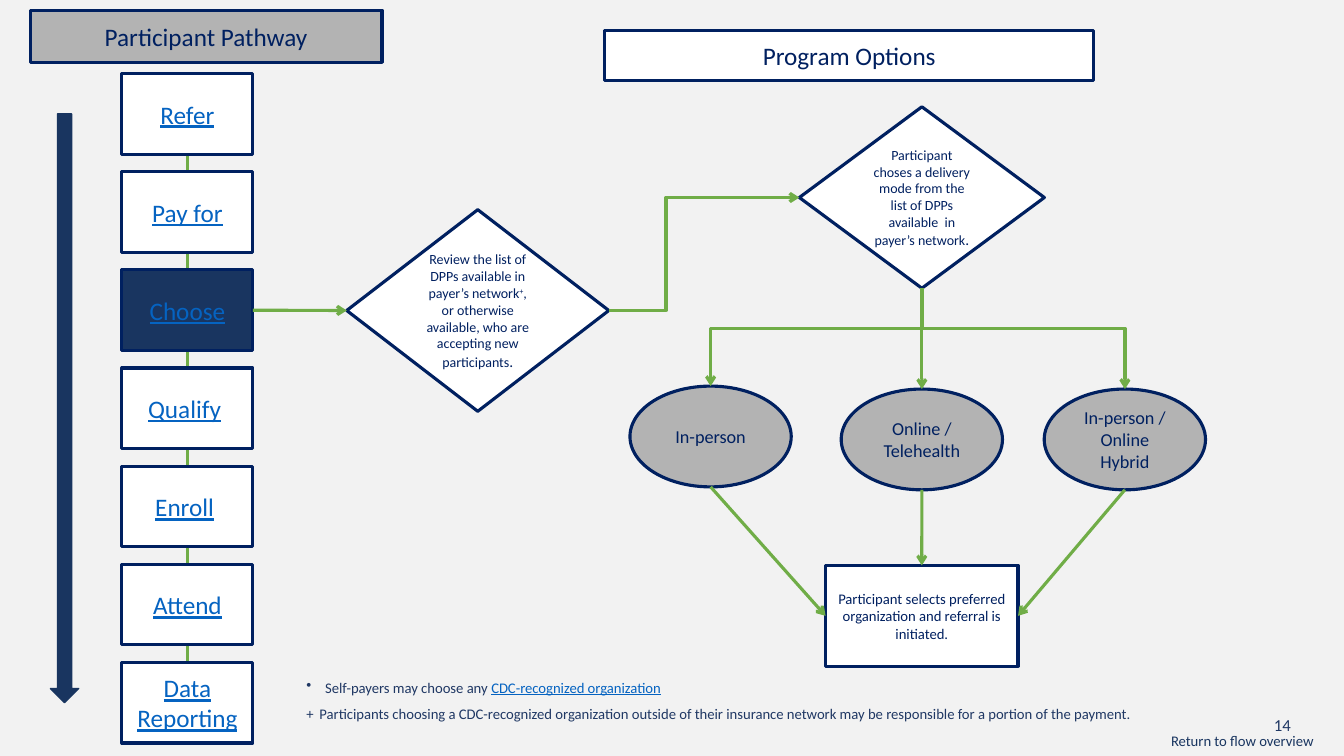
from dataclasses import dataclass

from lxml import etree
from pptx import Presentation
from pptx.dml.color import RGBColor
from pptx.enum.shapes import MSO_CONNECTOR, MSO_SHAPE
from pptx.enum.text import MSO_ANCHOR, PP_ALIGN
from pptx.oxml.ns import qn
from pptx.shapes.autoshape import Shape
from pptx.shapes.connector import Connector
from pptx.util import Pt

RECT, DIAMOND = MSO_SHAPE.RECTANGLE, MSO_SHAPE.FLOWCHART_DECISION
ELLIPSE, DOWN_ARROW = MSO_SHAPE.OVAL, MSO_SHAPE.DOWN_ARROW
STRAIGHT, ELBOW = MSO_CONNECTOR.STRAIGHT, MSO_CONNECTOR.ELBOW
CENTER, MIDDLE = PP_ALIGN.CENTER, MSO_ANCHOR.MIDDLE
TOP, LEFT, BOTTOM, RIGHT = range(4)

FONT = "Calibri"
NAVY, DEEP_BLUE, SLATE = "002060", "193560", "203864"
GREEN, GRAY, WHITE, PAPER, LINK = "70AD47", "B3B3B3", "FFFFFF", "F2F2F2", "0563C1"
LINE_WIDTH = 2.25


@dataclass
class Span:
    text: str
    size: float
    color: str = NAVY
    underline: bool = False
    superscript: bool = False


@dataclass
class Node:
    kind: int
    left: float
    top: float
    width: float
    height: float
    fill: str
    spans: tuple[Span, ...] = ()
    line: str = NAVY
    line_width: float = LINE_WIDTH


def rgb(color: str) -> RGBColor:
    return RGBColor.from_string(color)


def add_spans(para, spans: tuple[Span, ...]) -> None:
    for span in spans:
        run = para.add_run()
        run.text = span.text
        font = run.font
        font.name, font.size, font.underline = FONT, Pt(span.size), span.underline
        font.color.rgb = rgb(span.color)
        if span.superscript:
            run._r.get_or_add_rPr().set("baseline", "30000")


def add_node(page, node: Node) -> Shape:
    shape = page.shapes.add_shape(
        node.kind, Pt(node.left), Pt(node.top), Pt(node.width), Pt(node.height))
    shape.shadow.inherit = False
    shape.fill.solid()
    shape.fill.fore_color.rgb = rgb(node.fill)
    shape.line.color.rgb = rgb(node.line)
    shape.line.width = Pt(node.line_width)
    if node.spans:
        frame = shape.text_frame
        frame.word_wrap, frame.vertical_anchor = True, MIDDLE
        frame.paragraphs[0].alignment = CENTER
        add_spans(frame.paragraphs[0], node.spans)
    return shape


def add_text(page, left: float, top: float, width: float, height: float,
             lines: list[tuple[Span, ...]], wrap: bool = False) -> Shape:
    box = page.shapes.add_textbox(Pt(left), Pt(top), Pt(width), Pt(height))
    frame = box.text_frame
    frame.word_wrap = wrap
    for index, spans in enumerate(lines):
        para = frame.add_paragraph() if index else frame.paragraphs[0]
        add_spans(para, spans)
    return box


def hang(para, indent: float, bullet: str = "") -> None:
    """Give a paragraph a hanging indent and, if named, a bullet."""
    properties = para._p.get_or_add_pPr()
    properties.set("marL", str(Pt(indent)))
    properties.set("indent", str(-Pt(indent)))
    if bullet:
        etree.SubElement(properties, qn("a:buChar")).set("char", bullet)


def add_link(page, kind: int = STRAIGHT, ends: tuple[int, ...] = (0, 0, 0, 0),
             arrow: bool = True, bend: float | None = None) -> Connector:
    """Draw a green connector; bend is where an elbow turns, as a share of its run."""
    link = page.shapes.add_connector(kind, *ends)
    link.line.color.rgb = rgb(GREEN)
    link.line.width = Pt(LINE_WIDTH)
    if arrow:
        etree.SubElement(link.line._get_or_add_ln(), qn("a:tailEnd")).set("type", "arrow")
    properties = link._element.spPr
    etree.SubElement(properties, qn("a:effectLst"))
    if bend is not None:
        guides = properties.find(qn("a:prstGeom")).get_or_add_avLst()
        guide = etree.SubElement(guides, qn("a:gd"))
        guide.set("name", "adj1")
        guide.set("fmla", f"val {round(bend * 100000)}")
    return link


def join(link: Connector, start: Shape, start_side: int, end: Shape, end_side: int) -> None:
    link.begin_connect(start, start_side)
    link.end_connect(end, end_side)


def bottom_center(shape: Shape) -> tuple[int, int]:
    return shape.left + shape.width // 2, shape.top + shape.height


def add_branch(page, start: Shape, end: Shape, drop: float) -> None:
    """Lead down, across and down again: a quarter-turned elbow about its own centre."""
    start_x, start_y = bottom_center(start)
    end_x, end_y = end.left + end.width // 2, end.top
    middle_x, middle_y = (start_x + end_x) // 2, (start_y + end_y) // 2
    half_run, half_rise = (end_y - start_y) // 2, abs(end_x - start_x) // 2
    rightward = end_x > start_x
    reach = -half_run if rightward else half_run
    ends = (middle_x - reach, middle_y - half_rise, middle_x + reach, middle_y + half_rise)
    link = add_link(page, ELBOW, ends, bend=Pt(drop) / (end_y - start_y))
    link._element.spPr.xfrm.set("rot", str((270 if rightward else 90) * 60000))


def add_pathway(page) -> Shape:
    """Draw the column of steps and return the current one."""
    spine = add_link(page, arrow=False)
    labels = ("Refer", "Pay for", "Choose", "Qualify ", "Enroll ", "Attend", "Data Reporting")
    steps = []
    for index, label in enumerate(labels):
        spans = [Span(label.rstrip(), 18, LINK, True)]
        if label.endswith(" "):
            spans.append(Span(" ", 18))
        fill = DEEP_BLUE if label == "Choose" else WHITE
        steps.append(add_node(page, Node(
            RECT, 87.1, 52.6 + 70.1 * index, 93.6, 57.6, fill, tuple(spans))))
    join(spine, steps[0], BOTTOM, steps[-1], TOP)
    return steps[labels.index("Choose")]


def add_flow(page, choose: Shape) -> None:
    review = add_node(page, Node(DIAMOND, 247.7, 149.8, 187.2, 144, WHITE, (
        Span("Review the list of DPPs available in payer’s network", 10),
        Span("+", 10, superscript=True),
        Span(", or otherwise available, who are accepting new participants", 10),
        Span(".", 11))))
    delivery = add_node(page, Node(DIAMOND, 571, 76.3, 175, 129.6, WHITE, (
        Span("Participant choses a delivery mode from the list of DPPs "
             "available  in payer’s network", 10),
        Span(".", 11))))
    outcome = add_node(page, Node(RECT, 589.7, 403.9, 137.5, 72, WHITE, (
        Span("Participant selects preferred organization and referral is initiated.", 10.5),)))
    in_person, online, hybrid = (
        add_node(page, Node(ELLIPSE, left, top, 115.2, 72, GRAY, (Span(label, 13),)))
        for label, left, top in (("In-person", 450, 275.8),
                                 ("Online / Telehealth", 600.9, 277.9),
                                 ("In-person / Online Hybrid", 745.9, 277.9)))

    join(add_link(page), choose, RIGHT, review, LEFT)
    join(add_link(page, ELBOW, bend=0.3), review, RIGHT, delivery, LEFT)
    join(add_link(page), delivery, BOTTOM, online, TOP)
    for mode in (in_person, hybrid):
        add_branch(page, delivery, mode, 28.6)
    for mode, side in ((in_person, LEFT), (online, TOP), (hybrid, RIGHT)):
        link = add_link(page, ends=bottom_center(mode) * 2)
        link.end_connect(outcome, side)


def main() -> None:
    deck = Presentation()
    deck.slide_width, deck.slide_height = Pt(960), Pt(540)
    page = deck.slides.add_slide(deck.slide_layouts[6])
    page.background.fill.solid()
    page.background.fill.fore_color.rgb = rgb(PAPER)

    add_node(page, Node(DOWN_ARROW, 36, 81.4, 20.2, 420.5, DEEP_BLUE,
                        line=DEEP_BLUE, line_width=1))
    add_node(page, Node(RECT, 21.6, 7.2, 251.3, 37.4, GRAY, (Span("Participant Pathway", 18),)))
    add_node(page, Node(RECT, 432, 21.6, 349.2, 36, WHITE, (Span("Program Options", 18),)))
    add_flow(page, add_pathway(page))

    notes = add_text(page, 211.7, 481, 617.8, 38.9, [
        (Span("Self-payers may choose any ", 10.5, SLATE),
         Span("CDC-recognized organization", 10.5, LINK, True)),
        (Span("+\tParticipants choosing a CDC-recognized organization outside of their "
              "insurance network may be responsible for a portion of the payment.",
              10.5, SLATE),)], wrap=True)
    self_payers, out_of_network = notes.text_frame.paragraphs
    hang(self_payers, 13.5, "•")
    out_of_network.space_before = Pt(6)
    hang(out_of_network, 9.4)

    add_text(page, 902.9, 506.9, 28.8, 21.6, [(Span("14", 12, SLATE),)])
    add_text(page, 829.4, 519.1, 118.1, 20.2,
             [(Span("Return to flow overview", 10.5, DEEP_BLUE),)])
    deck.save("out.pptx")


if __name__ == "__main__":
    main()
